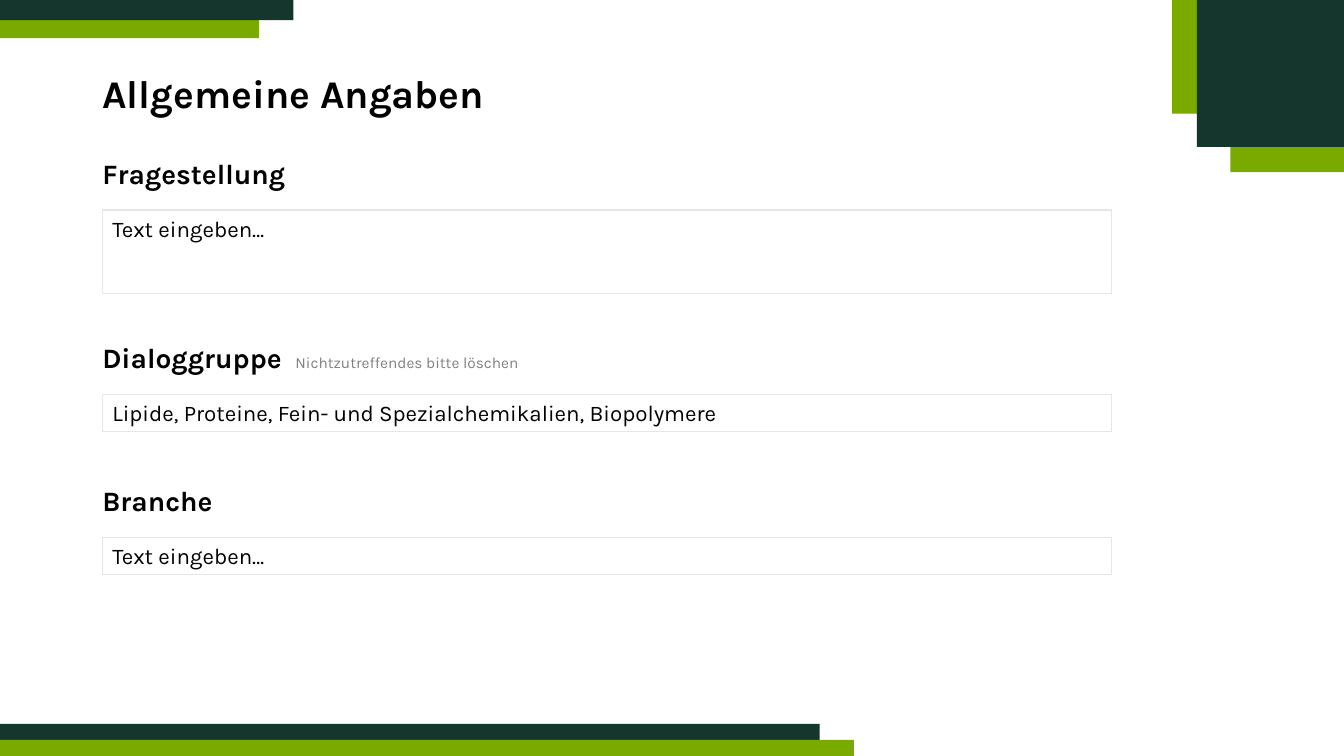
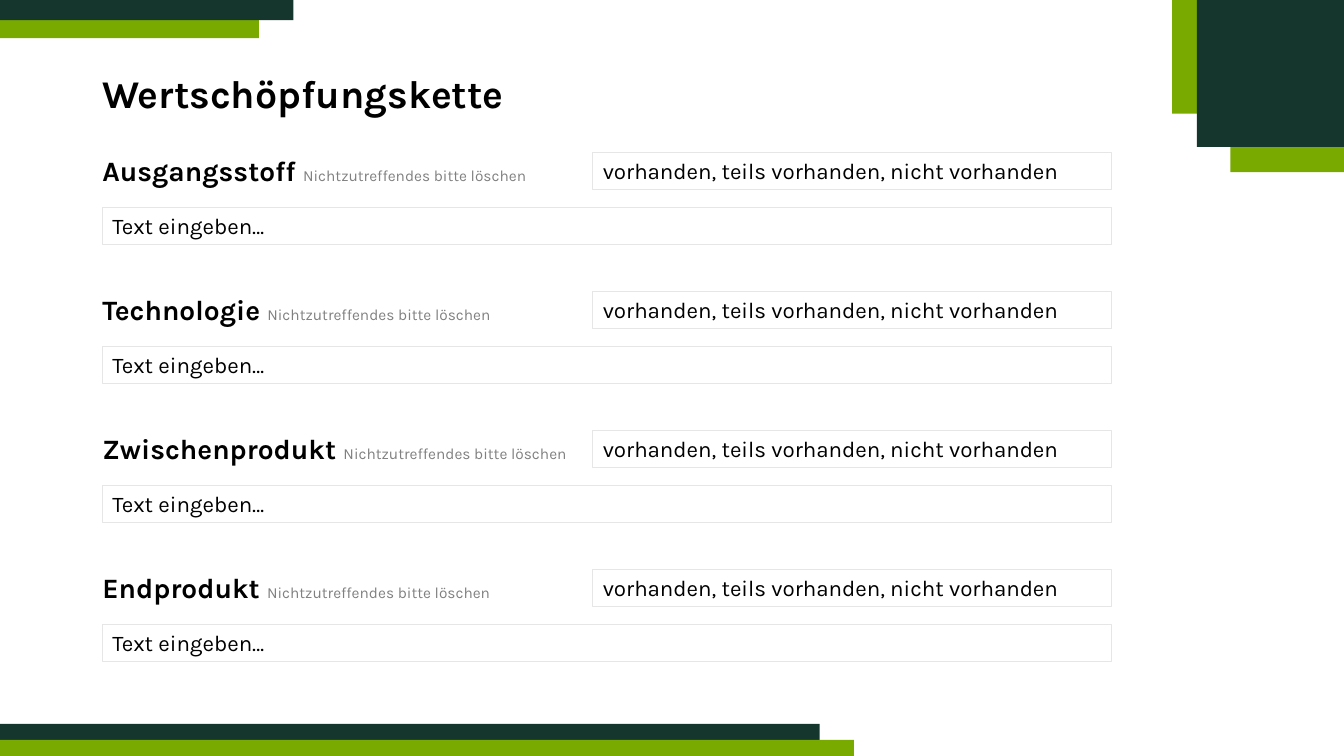
"""Build two form slides for general details and the value chain."""
from dataclasses import dataclass

from lxml.etree import SubElement
from pptx import Presentation
from pptx.dml.color import RGBColor
from pptx.enum.shapes import MSO_SHAPE
from pptx.enum.text import MSO_ANCHOR, MSO_AUTO_SIZE, PP_ALIGN
from pptx.oxml.ns import qn
from pptx.presentation import Presentation as Deck
from pptx.slide import Slide
from pptx.text.text import TextFrame
from pptx.util import Pt

DARK_GREEN = RGBColor(0x15, 0x36, 0x2D)
LIGHT_GREEN = RGBColor(0x78, 0xAA, 0x00)
BLACK = RGBColor(0x00, 0x00, 0x00)
HINT_GREY = RGBColor(0x80, 0x80, 0x80)
BORDER_GREY = RGBColor(0xE7, 0xE6, 0xE6)

FONT = "Karla"
HINT = "Nichtzutreffendes bitte löschen"
PROMPT = "Text eingeben…"
STATUS = "vorhanden, teils vorhanden, nicht vorhanden"

LABEL_LEFT = 66
LABEL_WIDTH = 414
LABEL_HEIGHT = 31.5
CONTENT_WIDTH = 728
FIELD_LEFT = 73.2
FIELD_WIDTH = 720.8
FIELD_HEIGHT = 26.5
FIELD_OFFSET = 42
STATUS_LEFT = 423.5
STATUS_OFFSET = 2.8
CHAIN_TOP = 106
CHAIN_PITCH = 99.3


@dataclass(frozen=True)
class Band:
    """A decorative rectangle at the slide edge."""

    left: float
    top: float
    width: float
    height: float
    color: RGBColor


@dataclass(frozen=True)
class Entry:
    """A labelled input field, optionally with a hint and a status field."""

    label: str
    top: float
    text: str = PROMPT
    height: float = FIELD_HEIGHT
    label_width: float = LABEL_WIDTH
    hint: str = ""
    hint_tab: float = 0
    status: str = ""


BANDS = (
    Band(0, 13, 185, 14.2, LIGHT_GREEN),
    Band(878.8, 0, 81.2, 123, LIGHT_GREEN),
    Band(837.2, 0, 122.8, 81.2, LIGHT_GREEN),
    Band(855, 0, 105, 105, DARK_GREEN),
    Band(0, 517, 585.5, 21, DARK_GREEN),
    Band(0, 528.5, 610, 11.5, LIGHT_GREEN),
    Band(0, 0, 209.5, 14.4, DARK_GREEN),
)

GENERAL_ENTRIES = (
    Entry("Fragestellung", 108, height=59.5),
    Entry("Dialoggruppe", 239.5,
          "Lipide, Proteine, Fein- und Spezialchemikalien, Biopolymere",
          label_width=CONTENT_WIDTH, hint=HINT, hint_tab=138),
    Entry("Branche", 341.8),
)

CHAIN_ENTRIES = tuple(
    Entry(label, CHAIN_TOP + index * CHAIN_PITCH, hint=HINT, status=STATUS)
    for index, label in enumerate(
        ("Ausgangsstoff", "Technologie", "Zwischenprodukt", "Endprodukt"))
)


def add_band(slide: Slide, band: Band) -> None:
    """Draw one borderless band."""
    shape = slide.shapes.add_shape(
        MSO_SHAPE.RECTANGLE, Pt(band.left), Pt(band.top), Pt(band.width), Pt(band.height))
    shape.shadow.inherit = False
    shape.fill.solid()
    shape.fill.fore_color.rgb = band.color
    shape.line.fill.background()


def write_text(frame: TextFrame, text: str, size: float, bold: bool = False) -> None:
    """Write one left-aligned black paragraph."""
    frame.word_wrap = True
    paragraph = frame.paragraphs[0]
    paragraph.text = text
    paragraph.alignment = PP_ALIGN.LEFT
    paragraph.font.name = FONT
    paragraph.font.size = Pt(size)
    paragraph.font.bold = bold
    paragraph.font.color.rgb = BLACK


def add_label(slide: Slide, entry: Entry) -> None:
    """Write the entry's heading followed by its hint."""
    box = slide.shapes.add_textbox(
        Pt(LABEL_LEFT), Pt(entry.top), Pt(entry.label_width), Pt(LABEL_HEIGHT))
    frame = box.text_frame
    paragraph = frame.paragraphs[0]
    if entry.hint_tab:
        tabs = SubElement(paragraph._p.get_or_add_pPr(), qn("a:tabLst"))
        SubElement(tabs, qn("a:tab"), pos=str(Pt(entry.hint_tab)), algn="l")
    gap = "\t" if entry.hint_tab else " "
    write_text(frame, entry.label + gap if entry.hint else entry.label, 20, True)
    if entry.hint:
        run = paragraph.add_run()
        run.text = entry.hint
        run.font.size = Pt(11)
        run.font.bold = False
        run.font.color.rgb = HINT_GREY


def add_field(slide: Slide, left: float, top: float, height: float, text: str) -> None:
    """Draw an outlined field reaching the right content edge."""
    width = FIELD_LEFT + FIELD_WIDTH - left
    shape = slide.shapes.add_shape(
        MSO_SHAPE.RECTANGLE, Pt(left), Pt(top), Pt(width), Pt(height))
    shape.shadow.inherit = False
    shape.fill.background()
    shape.line.color.rgb = BORDER_GREY
    shape.line.width = Pt(0.75)
    shape.text_frame.vertical_anchor = MSO_ANCHOR.TOP
    write_text(shape.text_frame, text, 16)


def add_entry(slide: Slide, entry: Entry) -> None:
    """Draw a label with its fields."""
    add_label(slide, entry)
    add_field(slide, FIELD_LEFT, entry.top + FIELD_OFFSET, entry.height, entry.text)
    if entry.status:
        add_field(slide, STATUS_LEFT, entry.top + STATUS_OFFSET, FIELD_HEIGHT, entry.status)


def add_form_slide(presentation: Deck, heading: str, entries: tuple[Entry, ...]) -> None:
    """Add a slide with the shared bands, a title and its entries."""
    slide = presentation.slides.add_slide(presentation.slide_layouts[5])
    for band in BANDS:
        add_band(slide, band)
    title = slide.shapes.title
    title.left, title.top = Pt(LABEL_LEFT), Pt(42.5)
    title.width, title.height = Pt(CONTENT_WIDTH), Pt(52.5)
    frame = title.text_frame
    frame.auto_size = MSO_AUTO_SIZE.NONE
    frame.vertical_anchor = MSO_ANCHOR.MIDDLE
    write_text(frame, heading, 28, True)
    frame.paragraphs[0].line_spacing = 0.9
    for entry in entries:
        add_entry(slide, entry)


def main() -> None:
    """Build and save the presentation."""
    presentation = Presentation()
    presentation.slide_width, presentation.slide_height = Pt(960), Pt(540)
    add_form_slide(presentation, "Allgemeine Angaben", GENERAL_ENTRIES)
    add_form_slide(presentation, "Wertschöpfungskette", CHAIN_ENTRIES)
    presentation.save("out.pptx")


if __name__ == "__main__":
    main()
